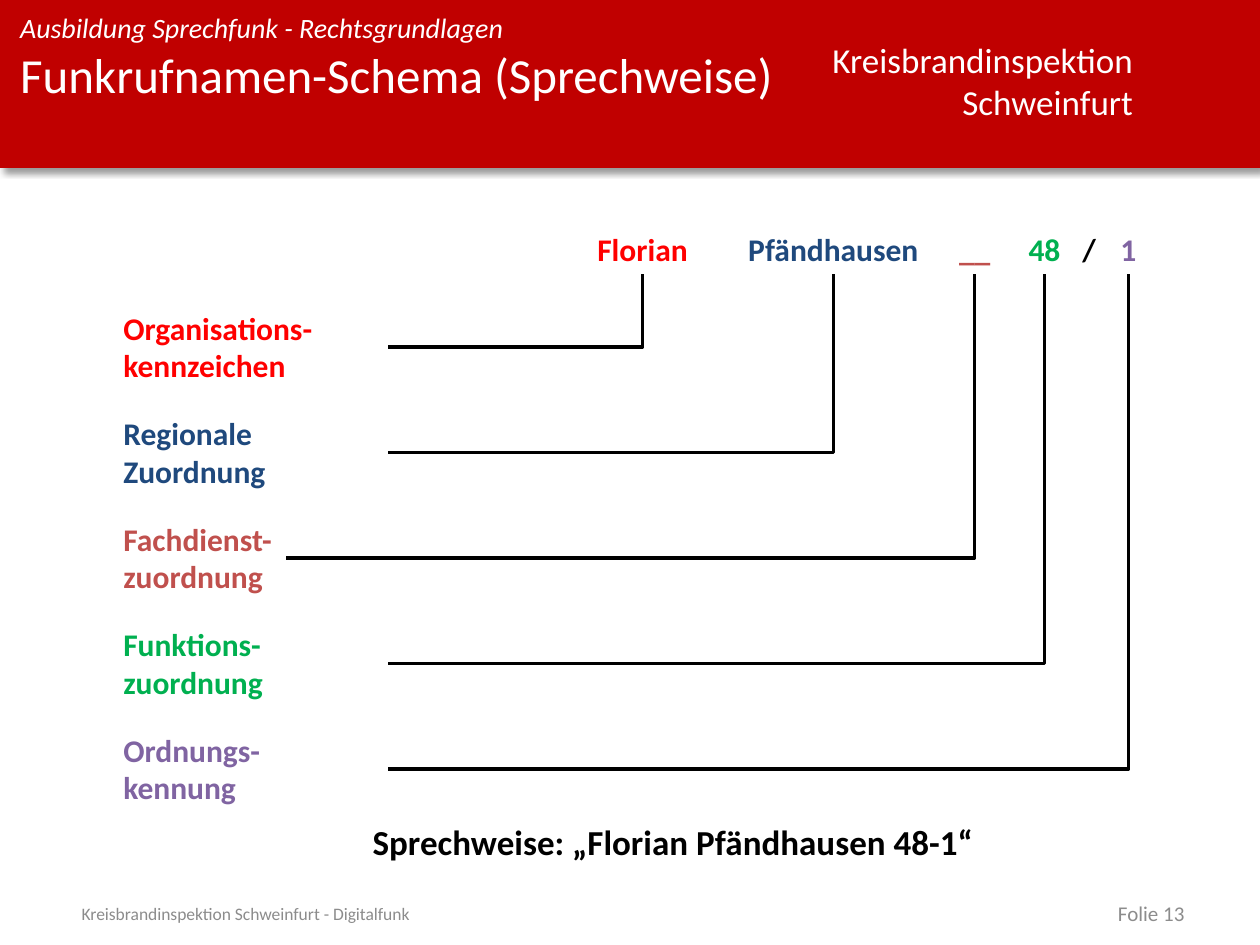
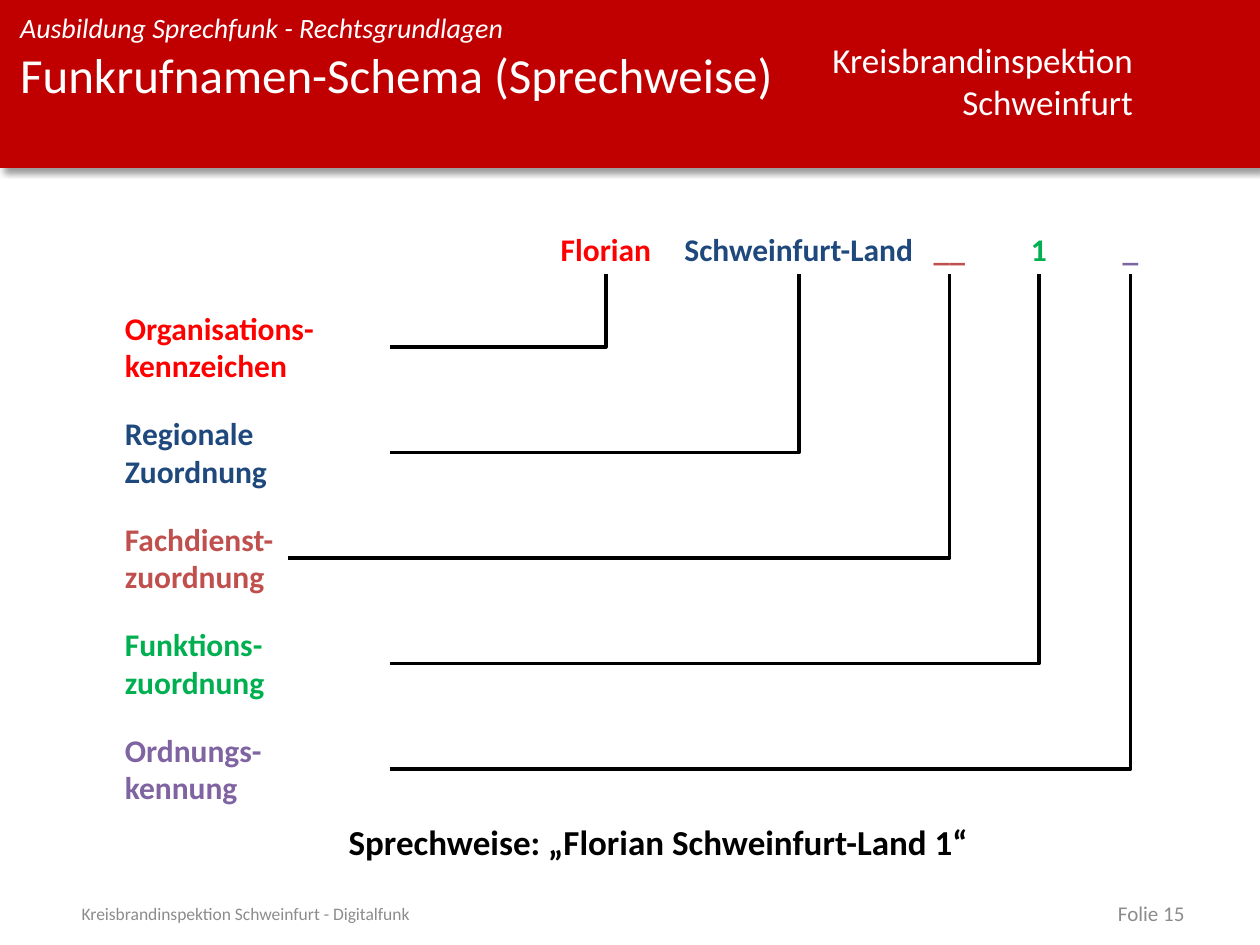
from lxml import etree
from pptx import Presentation
from pptx.dml.color import RGBColor
from pptx.enum import shapes, text
from pptx.oxml import ns
from pptx.util import Pt

HUES = {"band": "C00000", "light": "FFFFFF", "foot": "8C8C8C", "ink": "000000",
        "org": "FF0000", "area": "1F497D", "branch": "C0504D",
        "role": "00B050", "unit": "8064A2"}
ALIGN = text.PP_ALIGN
TOP, MID = text.MSO_ANCHOR.TOP, text.MSO_ANCHOR.MIDDLE

# key, label lines, label width
PARTS = [("org", "Organisations-\nkennzeichen", 158.4),
         ("area", "Regionale\nZuordnung", 158.4),
         ("branch", "Fachdienst-\nzuordnung", 100.1),
         ("role", "Funktions-\nzuordnung", 158.4),
         ("unit", "Ordnungs-\nkennung", 158.4)]
ROW, STEP = 172.8, 60.3
CODE = 127.5, 29

# codes: text, centre, width
PAGES = [
    {"num": 13, "left": 63.4, "slash": 622.4,
     "codes": [("Florian", 367.2, 66.2), ("Pfändhausen", 476.2, 113), ("__", 557, 32.4),
               ("48", 596.9, 33.1), ("1", 644.8, 23.8)],
     "say": ("Sprechweise: „Florian Pfändhausen 48-1“", 205.9, 365)},
    {"num": 15, "left": 64.3, "slash": None,
     "codes": [("Florian", 346.3, 66.2), ("Schweinfurt-Land", 456.5, 146.9), ("__", 542.5, 32.4),
               ("1", 593.6, 23.8), ("_", 646, 23.8)],
     "say": ("Sprechweise: „Florian Schweinfurt-Land 1“", 192.2, 376)},
]


def rgb(key):
    return RGBColor.from_string(HUES[key])


def effect(shape):
    return etree.SubElement(shape.element.spPr, ns.qn("a:effectLst"))


class Deck:
    def __init__(self):
        self.prs = Presentation()
        self.prs.slide_width, self.prs.slide_height = Pt(720), Pt(540)
        self.slide = None

    def page(self, num):
        self.slide = self.prs.slides.add_slide(self.prs.slide_layouts[5])
        self.band()
        self.label("Kreisbrandinspektion\nSchweinfurt", (466.6, 18.7, 187.9, 55.4), 20,
                   "light", align=ALIGN.RIGHT)
        self.label("Ausbildung Sprechfunk - Rechtsgrundlagen", (11.5, 5.8, 455, 19.4), 16,
                   "light", inset=0, italic=True)
        self.title("Funkrufnamen-Schema (Sprechweise)")
        self.label("Kreisbrandinspektion Schweinfurt - Digitalfunk", (39.6, 514.8, 434.9, 14.4),
                   10, "foot", anchor=MID)
        self.label(f"Folie {num}", (516.2, 514.8, 167.8, 14.4), 12, "foot",
                   align=ALIGN.RIGHT, anchor=MID)

    def band(self):
        bar = self.slide.shapes.add_shape(shapes.MSO_SHAPE.RECTANGLE, 0, 0, Pt(720), Pt(96))
        bar.fill.solid()
        bar.fill.fore_color.rgb = rgb("band")
        bar.line.fill.background()
        cast = etree.SubElement(effect(bar), ns.qn("a:outerShdw"), blurRad=str(Pt(4)),
                                dist=str(Pt(3)), dir="2700000", algn="tl", rotWithShape="0")
        hue = etree.SubElement(cast, ns.qn("a:srgbClr"), val=HUES["ink"])
        etree.SubElement(hue, ns.qn("a:alpha"), val="40000")
        self.slide.shapes.title.element.addprevious(bar.element)

    def title(self, words):
        head = self.slide.shapes.title
        spot = dict(zip(("left", "top", "width", "height"), map(Pt, (11.5, 25.2, 455, 71.3))))
        for name, val in spot.items():
            setattr(head, name, val)
        self.fill(head, words, 28, "light", inset=0)

    def label(self, words, spot, size, hue, **form):
        box = self.slide.shapes.add_textbox(*map(Pt, spot))
        self.fill(box, words, size, hue, **form)
        return box

    def fill(self, box, words, size, hue, align=ALIGN.LEFT, anchor=TOP, inset=None,
             wrap=True, **font):
        """Put formatted words into a text box or placeholder."""
        frame = box.text_frame
        frame.text = words
        look = {"word_wrap": wrap, "auto_size": text.MSO_AUTO_SIZE.NONE,
                "vertical_anchor": anchor}
        if inset is not None:
            look.update({f"margin_{side}": Pt(inset)
                         for side in ("left", "top", "right", "bottom")})
        for name, val in look.items():
            setattr(frame, name, val)
        for para in frame.paragraphs:
            para.alignment = align
            for name, val in {"name": "Calibri", "size": Pt(size), **font}.items():
                setattr(para.font, name, val)
            para.font.color.rgb = rgb(hue)

    def code(self, words, mid, width, hue):
        top, high = CODE
        return self.label(words, (mid - width / 2, top, width, high), 18, hue, bold=True,
                          align=ALIGN.CENTER, anchor=MID, wrap=False)

    def elbow(self, start, end):
        """Run right from the start box, then up to the underside of the end box."""
        line = self.slide.shapes.add_connector(
            shapes.MSO_CONNECTOR.ELBOW, start.left + start.width, start.top + start.height // 2,
            end.left + end.width // 2, end.top + end.height)
        line.begin_connect(start, 3)
        line.end_connect(end, 2)
        line.element.xpath(".//a:prstGeom")[0].set("prst", "bentConnector2")
        line.line.color.rgb = rgb("ink")
        line.line.width = Pt(2)
        effect(line)

    def scheme(self, page):
        for row, ((key, words, width), code) in enumerate(zip(PARTS, page["codes"])):
            name = self.label(words, (page["left"], ROW + row * STEP, width, 50.9), 18, key,
                              bold=True)
            self.elbow(name, self.code(*code, key))
        if page["slash"]:
            self.code("/", page["slash"], 22.3, "ink")
        words, left, width = page["say"]
        self.label(words, (left, 465.1, width, 31.5), 20, "ink", bold=True)


def main():
    deck = Deck()
    for page in PAGES:
        deck.page(page["num"])
        deck.scheme(page)
    deck.prs.save("out.pptx")


if __name__ == "__main__":
    main()
